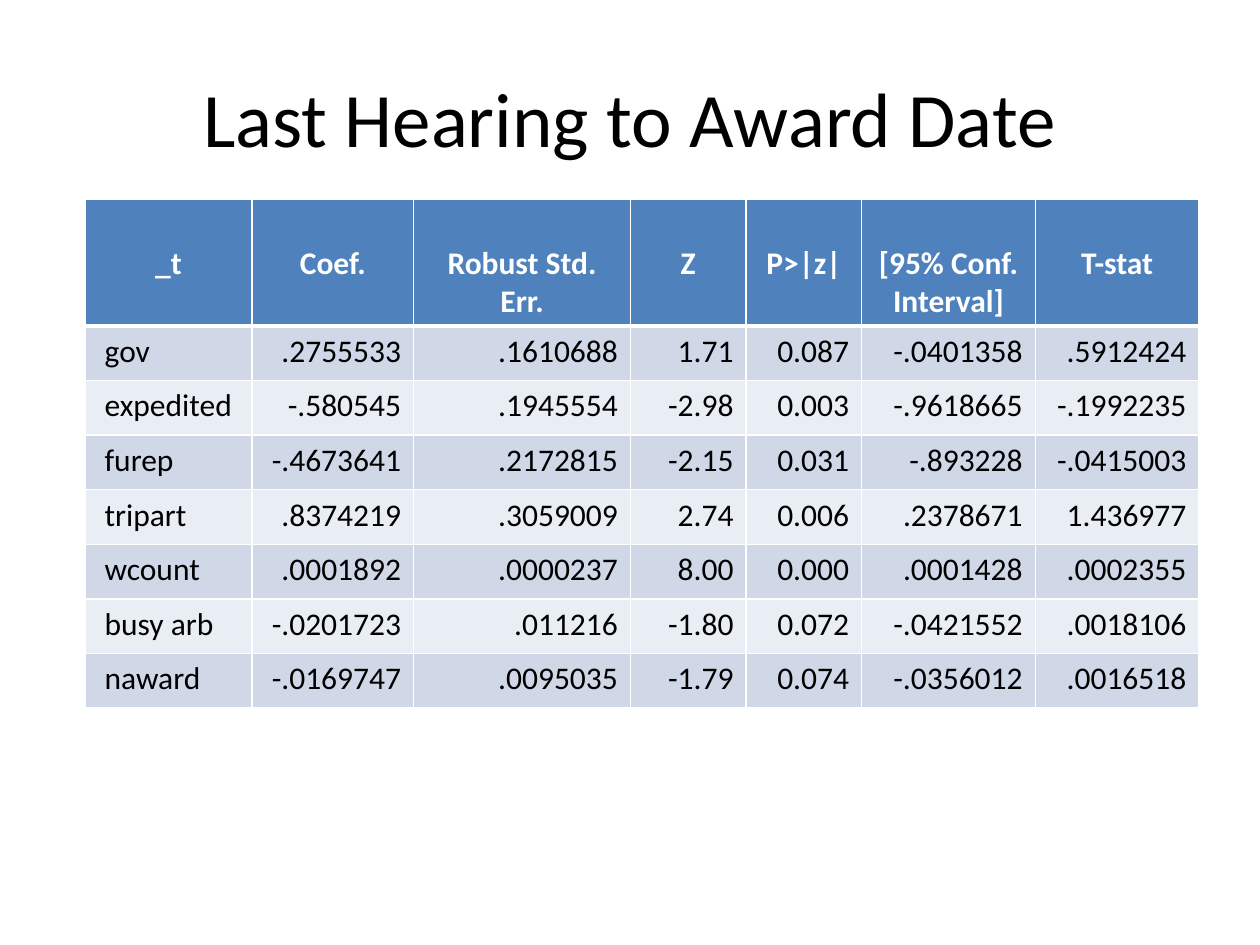
"""Build a slide with a table of regression results for last hearing to award date."""
from collections import namedtuple

from lxml import etree
from pptx import Presentation
from pptx import util as u
from pptx.dml.color import RGBColor
from pptx.enum import text
from pptx.oxml import ns

Theme = namedtuple("Theme", "font title_size table_size ink white header bands")
theme = Theme("Calibri", 44, 18, "000000", "FFFFFF", "4F81BD", ("D0D8E8", "E9EDF4"))


def write(frame, words, *, size, color=theme.ink, bold=False, align=text.PP_ALIGN.LEFT):
    paragraph = frame.paragraphs[0]
    paragraph.alignment = align
    run = paragraph.add_run()
    run.text = words
    run.font.name = theme.font
    run.font.size = u.Pt(size)
    run.font.bold = bold
    run.font.color.rgb = RGBColor.from_string(color)


def rule_cell(cell, widths):
    properties = cell._tc.get_or_add_tcPr()
    for side, width in widths.items():
        line = etree.SubElement(properties, ns.qn(f"a:ln{side}"), w=str(u.Pt(width)))
        fill = etree.SubElement(line, ns.qn("a:solidFill"))
        etree.SubElement(fill, ns.qn("a:srgbClr"), val=theme.white)


headings = ["_t", "Coef.", "Robust Std. Err.", "Z", "P>|z|", "[95% Conf. Interval]", "T-stat"]
estimates = [
    ["gov", ".2755533", ".1610688", "1.71", "0.087", "-.0401358", ".5912424"],
    ["expedited", "-.580545", ".1945554", "-2.98", "0.003", "-.9618665", "-.1992235"],
    ["furep", "-.4673641", ".2172815", "-2.15", "0.031", "-.893228", "-.0415003"],
    ["tripart", ".8374219", ".3059009", "2.74", "0.006", ".2378671", "1.436977"],
    ["wcount", ".0001892", ".0000237", "8.00", "0.000", ".0001428", ".0002355"],
    ["busy arb", "-.0201723", ".011216", "-1.80", "0.072", "-.0421552", ".0018106"],
    ["naward", "-.0169747", ".0095035", "-1.79", "0.074", "-.0356012", ".0016518"],
]
column_widths = [3.37, 3.26, 4.37, 2.33, 2.33, 3.5, 3.3]
row_heights = [2.11] + [1.1] * len(estimates)

deck = Presentation()
deck.slide_width, deck.slide_height = u.Cm(25.4), u.Cm(19.05)
slide = deck.slides.add_slide(deck.slide_layouts[6])

title = slide.shapes.add_textbox(u.Cm(1.27), u.Cm(0.76), u.Cm(22.86), u.Cm(3.18)).text_frame
title.word_wrap = True
title.vertical_anchor = text.MSO_ANCHOR.MIDDLE
write(title, "Last Hearing to Award Date", size=theme.title_size, align=text.PP_ALIGN.CENTER)

results = slide.shapes.add_table(
    len(row_heights), len(column_widths), u.Cm(1.71), u.Cm(4.02),
    u.Cm(sum(column_widths)), u.Cm(sum(row_heights))).table
for column, width in zip(results.columns, column_widths):
    column.width = u.Cm(width)
for row, height in zip(results.rows, row_heights):
    row.height = u.Cm(height)

for r, entries in enumerate([headings] + estimates):
    for c, entry in enumerate(entries):
        cell = results.cell(r, c)
        rule_cell(cell, {"L": 1, "R": 1, "T": 3 if r == 1 else 1, "B": 3 if r == 0 else 1})
        cell.fill.solid()
        cell.fill.fore_color.rgb = RGBColor.from_string(
            theme.bands[(r - 1) % 2] if r else theme.header)
        if r == 0:
            cell.margin_top = u.Cm(0.9)
            write(cell.text_frame, entry, size=theme.table_size, color=theme.white,
                  bold=True, align=text.PP_ALIGN.CENTER)
        elif c == 0:
            cell.margin_left = u.Cm(0.4)
            write(cell.text_frame, entry, size=theme.table_size)
        else:
            write(cell.text_frame, entry, size=theme.table_size, align=text.PP_ALIGN.RIGHT)

deck.save("out.pptx")
